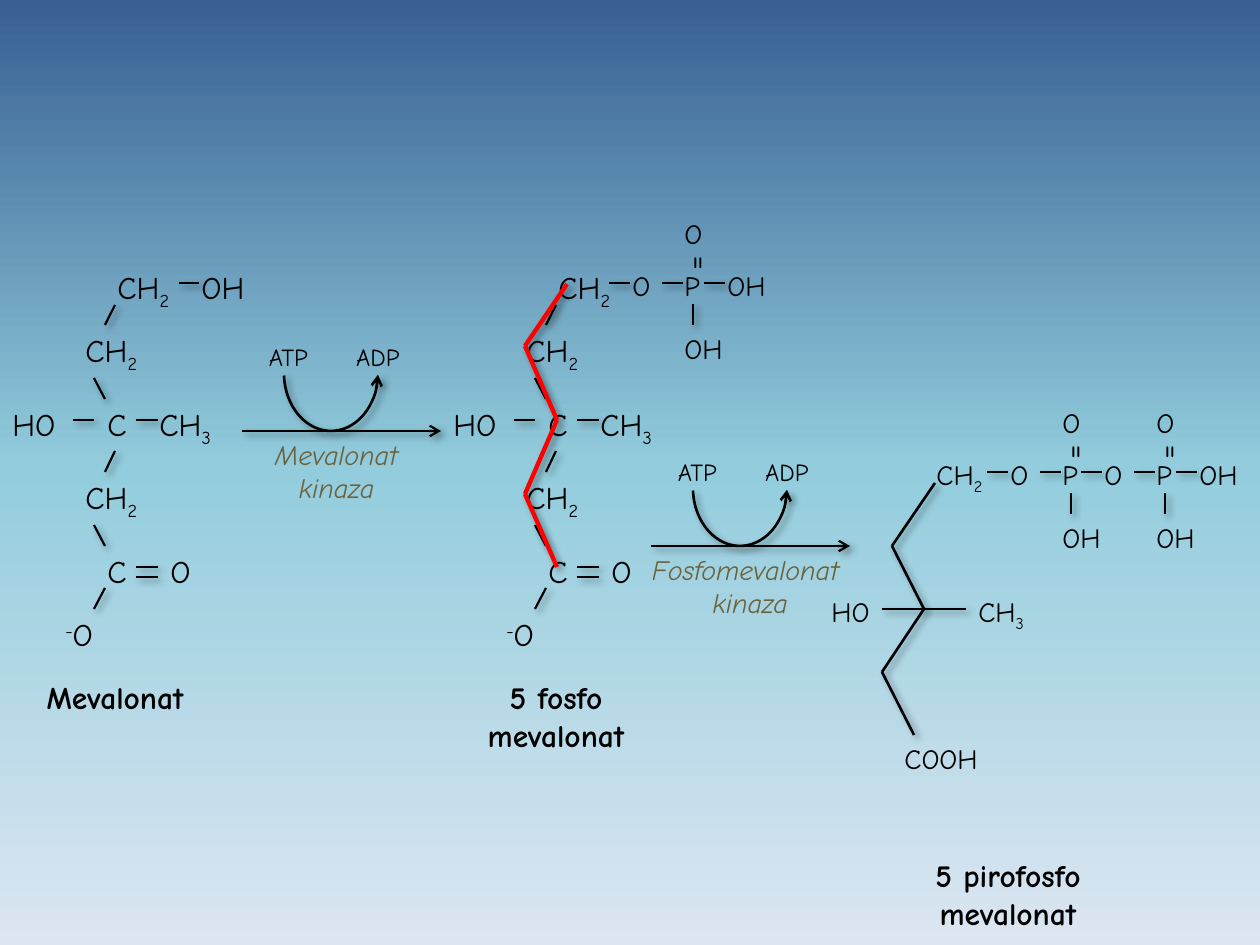
from copy import deepcopy
from itertools import pairwise

from lxml.etree import SubElement
from pptx import Presentation
from pptx.dml.color import RGBColor
from pptx.enum.shapes import MSO_CONNECTOR, MSO_SHAPE
from pptx.enum.text import MSO_AUTO_SIZE as AutoSize, PP_ALIGN as Align
from pptx.oxml.ns import qn
from pptx.util import Emu, Pt

PX = 914400 / 126
COLORS = {"ink": "000000", "enzyme": "6B633D", "chain": "FF0000",
          "sky_top": "376092", "sky_middle": "93CDDD", "sky_bottom": "DCE6F2"}
BASELINES = {"_": "-25000", "^": "30000"}
# Box widths of formulas that do not wrap, by text size
WIDTHS = {18: {"C": 44, "O": 50, "HO": 76, "OH": 76, "CH_2": 82, "=": 42},
          16: {"O": 48, "P": 40, "HO": 69, "COOH": 110}}
HEIGHTS = {18: 50, 16: 47}


def emu(*lengths):
    return [Emu(round(length * PX)) for length in lengths]


def rgb(name):
    return RGBColor.from_string(COLORS[name])


class Scheme:
    """Reaction scheme on one slide, with its drawing style."""

    font = "Comic Neue"

    def __init__(self, slide):
        self.slide = slide
        self.shapes = slide.shapes

    def background(self, *names):
        fill = self.slide.background.fill
        fill.gradient()
        fill.gradient_angle = 270
        stops = self.slide.element.find(".//" + qn("a:gsLst"))
        stops.append(deepcopy(stops[-1]))
        for index, (stop, name) in enumerate(zip(fill.gradient_stops, names)):
            stop.color.rgb = rgb(name)
            stop.position = index / (len(names) - 1)

    def stroke(self, shape, color, width, arrow=None):
        """Style an outline; arrow is headEnd or tailEnd."""
        shape.line.color.rgb = rgb(color)
        shape.line.width = Pt(width)
        properties = shape.element.find(qn("p:spPr"))
        if arrow:
            SubElement(properties.find(qn("a:ln")), qn(f"a:{arrow}"), type="arrow")
        effects = SubElement(properties, qn("a:effectLst"))
        shadow = SubElement(effects, qn("a:outerShdw"), blurRad=str(Pt(4)),
                            dist=str(Pt(3)), dir="2700000", rotWithShape="0")
        shade = SubElement(shadow, qn("a:srgbClr"), val=COLORS["ink"])
        SubElement(shade, qn("a:alpha"), val="40000")

    def bond(self, x1, y1, x2, y2, color="ink", width=1.25, arrow=None):
        line = self.shapes.add_connector(MSO_CONNECTOR.STRAIGHT, *emu(x1, y1, x2, y2))
        self.stroke(line, color, width, arrow)

    def chain(self, points, color, width):
        for start, end in pairwise(points):
            self.bond(*start, *end, color, width)

    def arc(self, left, top, width, height):
        curve = self.shapes.add_shape(MSO_SHAPE.ARC, *emu(left, top, width, height))
        curve.adjustments[0], curve.adjustments[1] = 1.345, 106.113
        curve.fill.background()
        self.stroke(curve, "ink", 1.5, "headEnd")

    def format_run(self, run, size, color="ink", **style):
        values = {"name": self.font, "size": Pt(size), **style}
        for name, value in values.items():
            setattr(run.font, name, value)
        run.font.color.rgb = rgb(color)

    def label(self, text, left, top, width, height, size, **style):
        frame = self.shapes.add_textbox(*emu(left, top, width, height)).text_frame
        frame.word_wrap = True
        frame.text = text
        for paragraph in frame.paragraphs:
            paragraph.alignment = Align.CENTER
            for run in paragraph.runs:
                self.format_run(run, size, **style)

    def formula(self, text, left, top, width=None, size=18, rotation=0):
        """Add a formula: _ lowers what follows, ^ raises one sign.

        It wraps only where a width is given."""
        box = self.shapes.add_textbox(
            *emu(left, top, width or WIDTHS[size][text], HEIGHTS[size]))
        box.rotation = rotation
        frame = box.text_frame
        frame.word_wrap = width is not None
        frame.auto_size = AutoSize.SHAPE_TO_FIT_TEXT
        parts = text.replace("_", "|_").replace("^-", "^-|").split("|")
        for part in parts:
            run = frame.paragraphs[0].add_run()
            run.text = part.lstrip("_^")
            self.format_run(run, size)
            if part[0] in BASELINES:
                run._r.get_or_add_rPr().set("baseline", BASELINES[part[0]])

    def mevalonate(self, left):
        for x1, y1, x2, y2 in (
                (136, 420, 158, 420), (73, 420, 94, 420), (105, 325, 115, 305),
                (94, 609, 105, 588), (136, 567, 158, 567), (136, 577, 158, 577),
                (105, 546, 94, 525), (105, 399, 94, 378), (105, 472, 115, 451)):
            self.bond(left + x1, y1, left + x2, y2)
        for text, x, y, *width in (
                ("CH_2", 105, 262), ("CH_2", 73, 325, 84), ("HO", 0, 399),
                ("C", 95, 399, 84), ("CH_3", 147, 399, 84), ("CH_2", 73, 472, 84),
                ("C", 95, 546), ("O", 158, 546), ("^-O", 53, 609, 84)):
            self.formula(text, left + x, y, *width)

    def phosphates(self, lefts, top):
        """Draw linked phosphate groups, closed by a hydroxyl."""
        middle = top + 21
        for left in lefts:
            self.formula("O", left - 52, top, size=16)
            self.formula("P", left, top, size=16)
            self.formula("=", left, top - 25, rotation=270)
            self.formula("O", left, top - 52, size=16)
            self.formula("OH", left, top + 63, 73, 16)
            self.bond(left - 63, middle, left - 42, middle)
            self.bond(left - 10, middle, left + 11, middle)
            self.bond(left + 21, top + 63, left + 21, top + 42)
        self.bond(left + 32, middle, left + 53, middle)
        self.formula("OH", left + 43, top, 73, 16)

    def reaction(self, left, top, enzyme, width):
        self.bond(left, top, left + 199, top, arrow="tailEnd")
        self.arc(left + 42, top - 116, 94, 116)
        self.label("ATP", left + 10, top - 95, 73, 42, 14)
        self.label("ADP", left + 94, top - 95, 84, 42, 14)
        self.label(enzyme, left + 94 - width // 2, top, width, 73, 16,
                   color="enzyme", italic=True)


def main():
    deck = Presentation()
    deck.slide_width, deck.slide_height = emu(1260, 945)
    scheme = Scheme(deck.slides.add_slide(deck.slide_layouts[6]))
    scheme.background("sky_top", "sky_middle", "sky_bottom")

    for left in (0, 441):
        scheme.mevalonate(left)
    scheme.bond(179, 283, 199, 283)
    scheme.formula("OH", 189, 262)
    scheme.phosphates([672], 262)
    scheme.chain([(567, 284), (525, 346), (557, 420), (525, 494), (557, 567)],
                 "chain", 2.5)

    scheme.chain([(935, 483), (892, 546), (924, 609), (882, 672), (914, 735)],
                 "ink", 1.5)
    scheme.chain([(882, 609), (924, 609), (966, 609)], "ink", 1.25)
    scheme.formula("CH_2", 924, 451, 84, 16)
    scheme.formula("HO", 819, 588, size=16)
    scheme.formula("CH_3", 966, 588, 84, 16)
    scheme.formula("COOH", 892, 735, size=16)
    scheme.phosphates([1050, 1144], 451)

    scheme.reaction(242, 431, "Mevalonat kinaza", 189)
    scheme.reaction(651, 546, "Fosfomevalonat\n kinaza", 231)
    for compound, left, top, height in (
            ("Mevalonat", 10, 672, 63), ("5 fosfo mevalonat", 451, 672, 94),
            ("5 pirofosfo mevalonat", 903, 850, 94)):
        scheme.label(compound, left, top, 210, height, 18, bold=True)
    deck.save("out.pptx")


if __name__ == "__main__":
    main()
